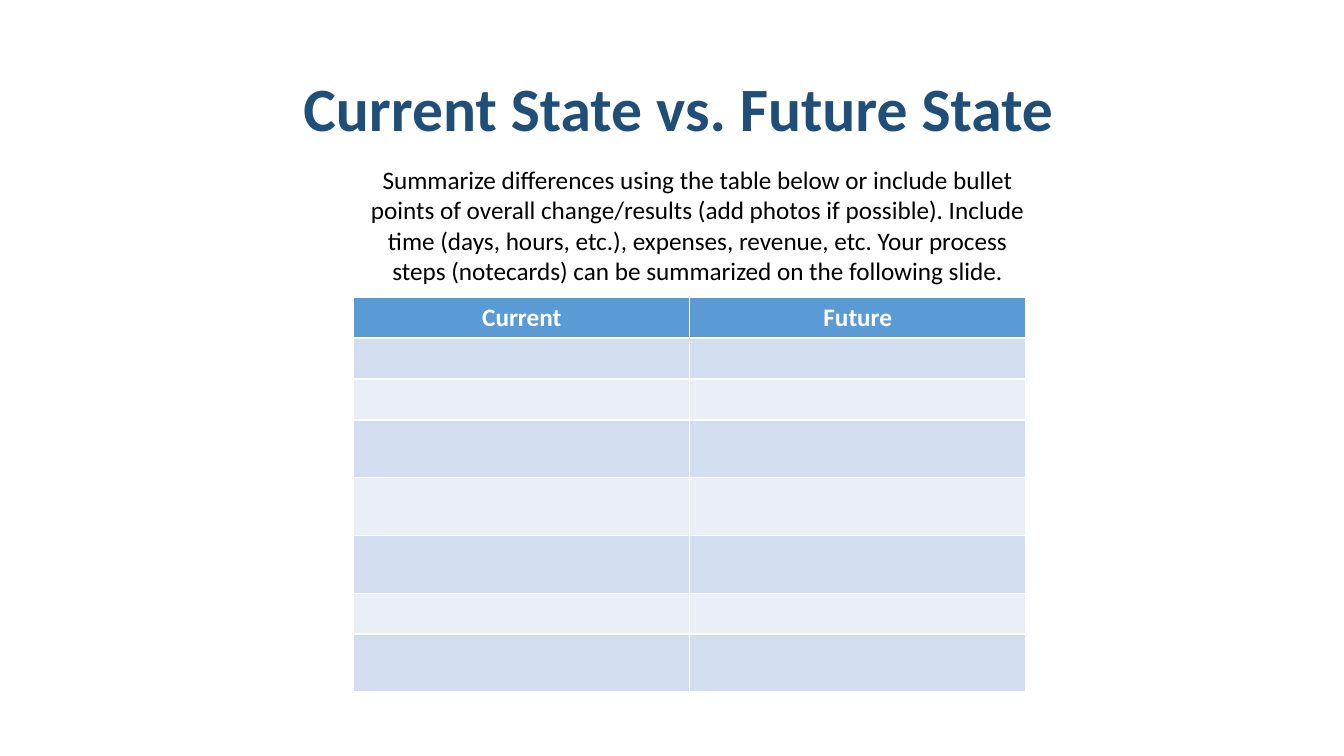
from pptx import Presentation
from pptx.dml.color import RGBColor
from pptx.enum.text import MSO_ANCHOR, PP_ALIGN
from pptx.util import Pt

PX = 9525
CENTER = PP_ALIGN.CENTER
MIDDLE = MSO_ANCHOR.MIDDLE
TITLE_ONLY = 5
COLORS = {
    "title": "1F4E79",
    "body": "000000",
    "header_text": "FFFFFF",
    "header": "5B9BD5",
    "odd_row": "D2DEEF",
    "even_row": "EAEFF7",
}
ROW_HEIGHTS = [39, 39, 39, 55, 55, 55, 39, 55]
COL_WIDTH = 320
HEADERS = ["Current", "Future"]
SUMMARY = (
    "Summarize differences using the table below or include bullet points of "
    "overall change/results (add photos if possible). Include time (days, hours, "
    "etc.), expenses, revenue, etc. Your process steps (notecards) can be "
    "summarized on the following slide."
)


def write(tf, text, color, size, bold=False):
    p = tf.paragraphs[0]
    p.alignment = CENTER
    r = p.add_run()
    r.text = text
    for name, value in {"name": "Calibri", "size": Pt(size), "bold": bold}.items():
        setattr(r.font, name, value)
    r.font.color.rgb = RGBColor.from_string(COLORS[color])
    return p


def box(left, top, width, height):
    return [v * PX for v in (left, top, width, height)]


prs = Presentation()
prs.slide_width, prs.slide_height = 1280 * PX, 720 * PX
s = prs.slides.add_slide(prs.slide_layouts[TITLE_ONLY])

title = s.shapes.title
title.left, title.top, title.width, title.height = box(221, 70, 864, 72)
title.text_frame.vertical_anchor = MIDDLE
p = write(title.text_frame, "Current State vs. Future State ", "title", 44, True)
p.line_spacing = 0.9

table = s.shapes.add_table(
    len(ROW_HEIGHTS), len(HEADERS),
    *box(337, 283, COL_WIDTH * len(HEADERS), sum(ROW_HEIGHTS)),
).table
for col in table.columns:
    col.width = COL_WIDTH * PX
for i, height in enumerate(ROW_HEIGHTS):
    row = table.rows[i]
    row.height = height * PX
    fill = "header" if i == 0 else "odd_row" if i % 2 else "even_row"
    for cell in row.cells:
        cell.fill.solid()
        cell.fill.fore_color.rgb = RGBColor.from_string(COLORS[fill])
for cell, text in zip(table.rows[0].cells, HEADERS):
    cell.vertical_anchor = MIDDLE
    write(cell.text_frame, text, "header_text", 18, True)

summary = s.shapes.add_textbox(*box(339, 152, 651, 126))
summary.text_frame.word_wrap = True
write(summary.text_frame, SUMMARY, "body", 18)

prs.save("out.pptx")
